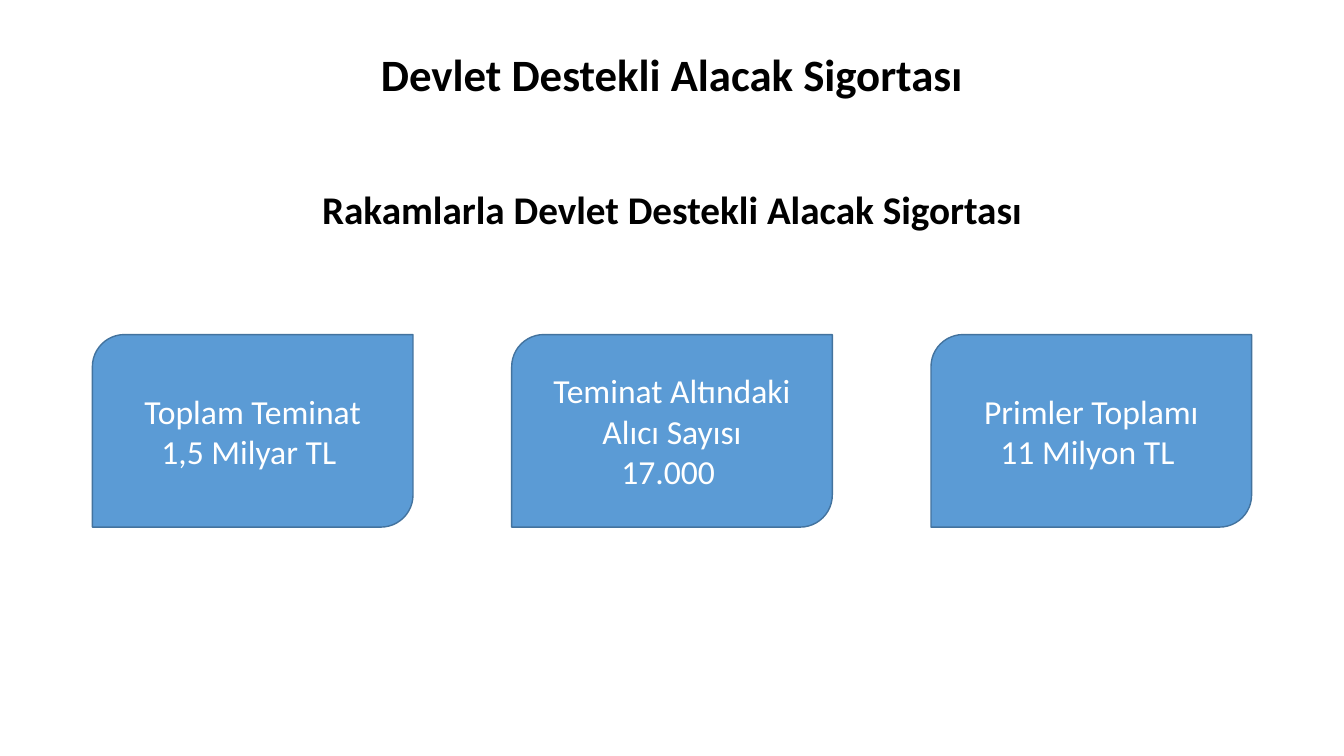
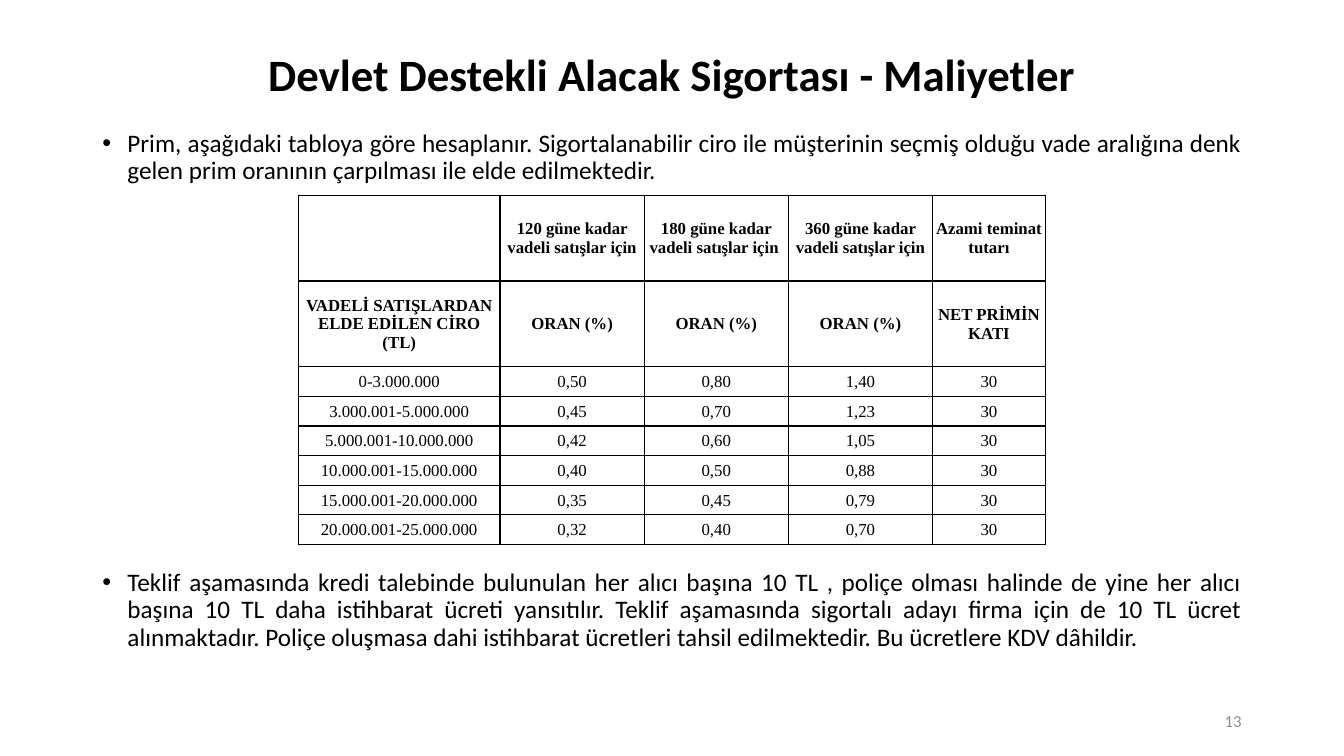
from lxml import etree
from pptx import Presentation
from pptx.dml.color import RGBColor
from pptx.enum.shapes import MSO_SHAPE
from pptx.enum.text import MSO_ANCHOR, PP_ALIGN
from pptx.oxml.ns import qn
from pptx.util import Pt

CENTER, RIGHT, JUSTIFY = PP_ALIGN.CENTER, PP_ALIGN.RIGHT, PP_ALIGN.JUSTIFY
TOP, MIDDLE = MSO_ANCHOR.TOP, MSO_ANCHOR.MIDDLE
CARD_SHAPE = MSO_SHAPE.ROUND_2_DIAG_RECTANGLE

SLIDE_WIDTH, SLIDE_HEIGHT = 960, 540
MARGIN = 66
CONTENT_WIDTH = SLIDE_WIDTH - 2 * MARGIN
BLACK, WHITE, GRAY = "000000", "FFFFFF", "8C8C8C"
CARD_FILL, CARD_LINE = "5B9BD5", "43739E"

TITLE = {"name": "Calibri", "size": Pt(32), "bold": True, "color": BLACK}
SUBTITLE = {**TITLE, "size": Pt(28)}
BODY = {"name": "Calibri", "size": Pt(18), "color": BLACK}
CARD = {"name": "Calibri", "size": Pt(24), "color": WHITE}
PAGE_NUMBER = {"name": "Calibri", "size": Pt(12), "color": GRAY}
TABLE_BODY = {"name": "Times New Roman", "size": Pt(12), "bold": False, "color": BLACK}
TABLE_HEAD = {**TABLE_BODY, "bold": True}

CARDS = [
    ["Toplam Teminat", "1,5 Milyar TL "],
    ["Teminat Altındaki Alıcı Sayısı", "17.000 "],
    ["Primler Toplamı", "11 Milyon TL "],
]
CARD_WIDTH, CARD_HEIGHT = 229, 137.5

HEAD_ROWS = [
    ["", "120 güne kadar vadeli satışlar için", "180 güne kadar vadeli satışlar için ",
     "360 güne kadar vadeli satışlar için", "Azami teminat tutarı"],
    ["VADELİ SATIŞLARDAN ELDE EDİLEN CİRO (TL)", *["ORAN (%)"] * 3, "NET PRİMİN KATI"],
]
RATE_ROWS = [
    ["0-3.000.000", "0,50", "0,80", "1,40", "30"],
    ["3.000.001-5.000.000", "0,45", "0,70", "1,23", "30"],
    ["5.000.001-10.000.000", "0,42", "0,60", "1,05", "30"],
    ["10.000.001-15.000.000", "0,40", "0,50", "0,88", "30"],
    ["15.000.001-20.000.000", "0,35", "0,45", "0,79", "30"],
    ["20.000.001-25.000.000", "0,32", "0,40", "0,70", "30"],
]
COLUMN_WIDTHS = [144, 103, 103, 103, 80.6]
HEAD_HEIGHT, RATE_HEIGHT = 61.2, 21.2

PREMIUM_TEXT = (
    "Prim, aşağıdaki tabloya göre hesaplanır. Sigortalanabilir ciro ile müşterinin "
    "seçmiş olduğu vade aralığına denk gelen prim oranının çarpılması ile elde edilmektedir."
)
FEE_TEXT = (
    "Teklif aşamasında kredi talebinde bulunulan her alıcı başına 10 TL , poliçe olması "
    "halinde de yine her alıcı başına 10 TL daha istihbarat ücreti yansıtılır. Teklif "
    "aşamasında sigortalı adayı firma için de 10 TL ücret alınmaktadır. Poliçe oluşmasa "
    "dahi istihbarat ücretleri tahsil edilmektedir. Bu ücretlere KDV dâhildir."
)


def color(value):
    return RGBColor.from_string(value)


def write(frame, lines, style, align=CENTER, spacing=1.0):
    """Fill a text frame with one paragraph per line and return the paragraphs."""
    for index, line in enumerate(lines):
        para = frame.add_paragraph() if index else frame.paragraphs[0]
        para.alignment = align
        para.line_spacing = spacing
        span = para.add_run()
        span.text = line
        for name, value in style.items():
            if name == "color":
                span.font.color.rgb = color(value)
            else:
                setattr(span.font, name, value)
    return frame.paragraphs


def add_text(slide, text, at, style, align=CENTER, anchor=MIDDLE, spacing=0.9):
    box = slide.shapes.add_textbox(*map(Pt, at))
    box.text_frame.word_wrap = True
    box.text_frame.vertical_anchor = anchor
    return write(box.text_frame, [text], style, align, spacing)[0]


def add_title(slide, text):
    add_text(slide, text, (MARGIN, 35, CONTENT_WIDTH, 40), TITLE)


def add_bullet(slide, text, top, height):
    para = add_text(slide, text, (MARGIN, top, CONTENT_WIDTH, height), BODY, JUSTIFY, TOP)
    properties = para._p.get_or_add_pPr()
    properties.set("marL", str(Pt(18)))
    properties.set("indent", str(-Pt(18)))
    etree.SubElement(properties, qn("a:buFont"), typeface="Arial")
    etree.SubElement(properties, qn("a:buChar"), char="•")


def add_card(slide, lines, left, top):
    card = slide.shapes.add_shape(CARD_SHAPE, *map(Pt, (left, top, CARD_WIDTH, CARD_HEIGHT)))
    card.shadow.inherit = False
    card.fill.solid()
    card.fill.fore_color.rgb = color(CARD_FILL)
    card.line.color.rgb = color(CARD_LINE)
    card.line.width = Pt(1)
    card.text_frame.word_wrap = True
    card.text_frame.vertical_anchor = MIDDLE
    write(card.text_frame, lines, CARD)


def add_borders(cell):
    properties = cell._tc.get_or_add_tcPr()
    for side in ("lnL", "lnR", "lnT", "lnB"):
        border = etree.SubElement(properties, qn(f"a:{side}"), w=str(Pt(1)))
        fill = etree.SubElement(border, qn("a:solidFill"))
        etree.SubElement(fill, qn("a:srgbClr"), val=BLACK)


def add_rate_table(slide, top):
    rows = HEAD_ROWS + RATE_ROWS
    heights = [HEAD_HEIGHT] * len(HEAD_ROWS) + [RATE_HEIGHT] * len(RATE_ROWS)
    width = sum(COLUMN_WIDTHS)
    at = ((SLIDE_WIDTH - width) / 2, top, width, sum(heights))
    table = slide.shapes.add_table(len(rows), len(COLUMN_WIDTHS), *map(Pt, at)).table
    table.first_row = table.horz_banding = False
    for column, column_width in zip(table.columns, COLUMN_WIDTHS):
        column.width = Pt(column_width)
    for index, (row, height, texts) in enumerate(zip(table.rows, heights, rows)):
        row.height = Pt(height)
        style = TABLE_HEAD if index < len(HEAD_ROWS) else TABLE_BODY
        for cell, text in zip(row.cells, texts):
            cell.margin_left = cell.margin_right = cell.margin_top = Pt(0.7)
            cell.margin_bottom = 0
            cell.vertical_anchor = MIDDLE
            add_borders(cell)
            cell.fill.background()
            if text:
                write(cell.text_frame, [text], style)


def build_figures(slide):
    add_title(slide, "Devlet Destekli Alacak Sigortası")
    add_text(slide, "Rakamlarla Devlet Destekli Alacak Sigortası",
             (MARGIN, 131, CONTENT_WIDTH, 40), SUBTITLE)
    step = (CONTENT_WIDTH - CARD_WIDTH) / (len(CARDS) - 1)
    for index, lines in enumerate(CARDS):
        add_card(slide, lines, MARGIN + index * step, 239)


def build_costs(slide):
    add_title(slide, "Devlet Destekli Alacak Sigortası - Maliyetler")
    add_bullet(slide, PREMIUM_TEXT, 90, 48)
    add_rate_table(slide, 139.5)
    add_bullet(slide, FEE_TEXT, 403.5, 68)
    add_text(slide, "13", (678, 500.5, 216, 28.5), PAGE_NUMBER, RIGHT, spacing=1.0)


def main():
    deck = Presentation()
    deck.slide_width, deck.slide_height = Pt(SLIDE_WIDTH), Pt(SLIDE_HEIGHT)
    for build in (build_figures, build_costs):
        build(deck.slides.add_slide(deck.slide_layouts[6]))
    deck.save("out.pptx")


if __name__ == "__main__":
    main()
